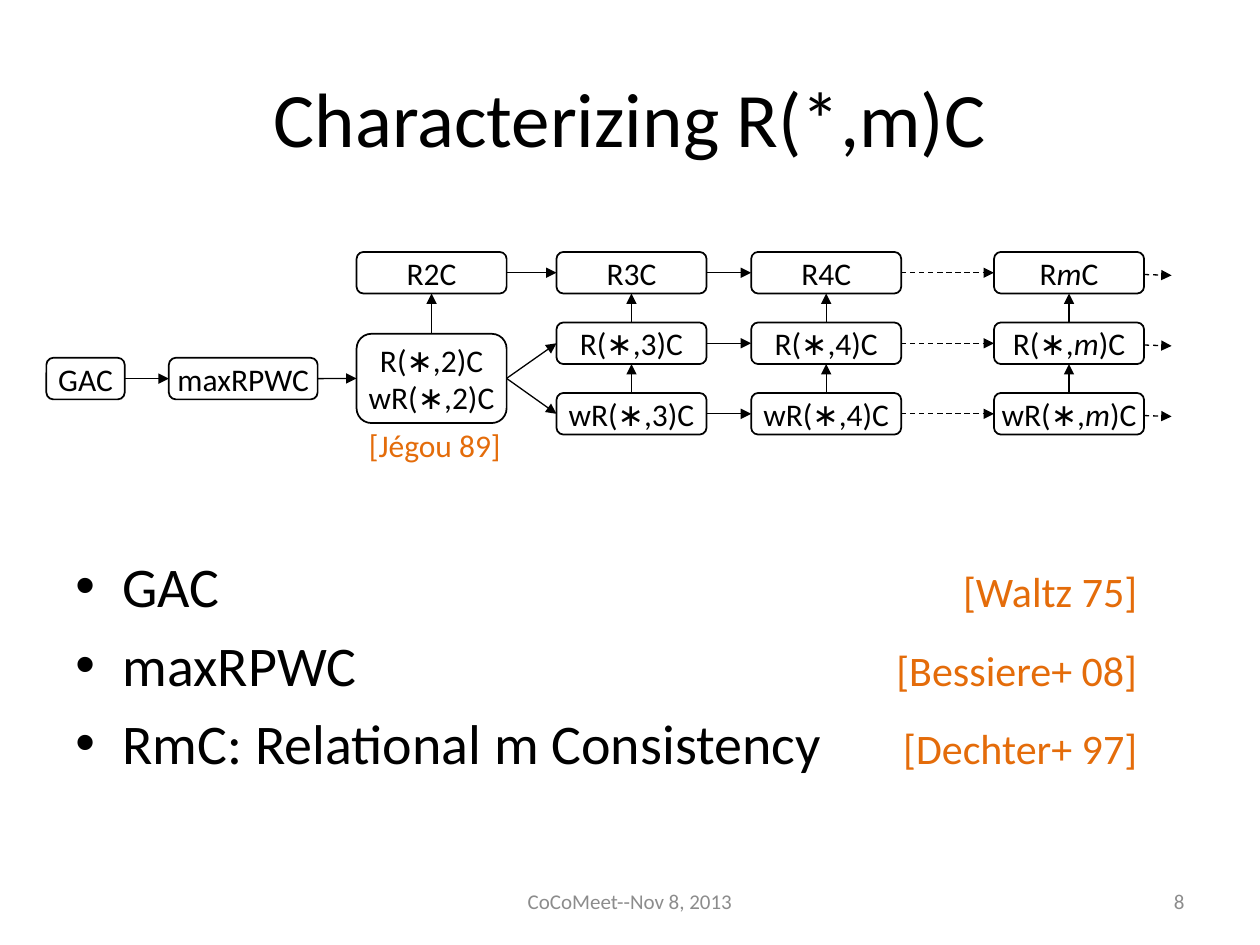
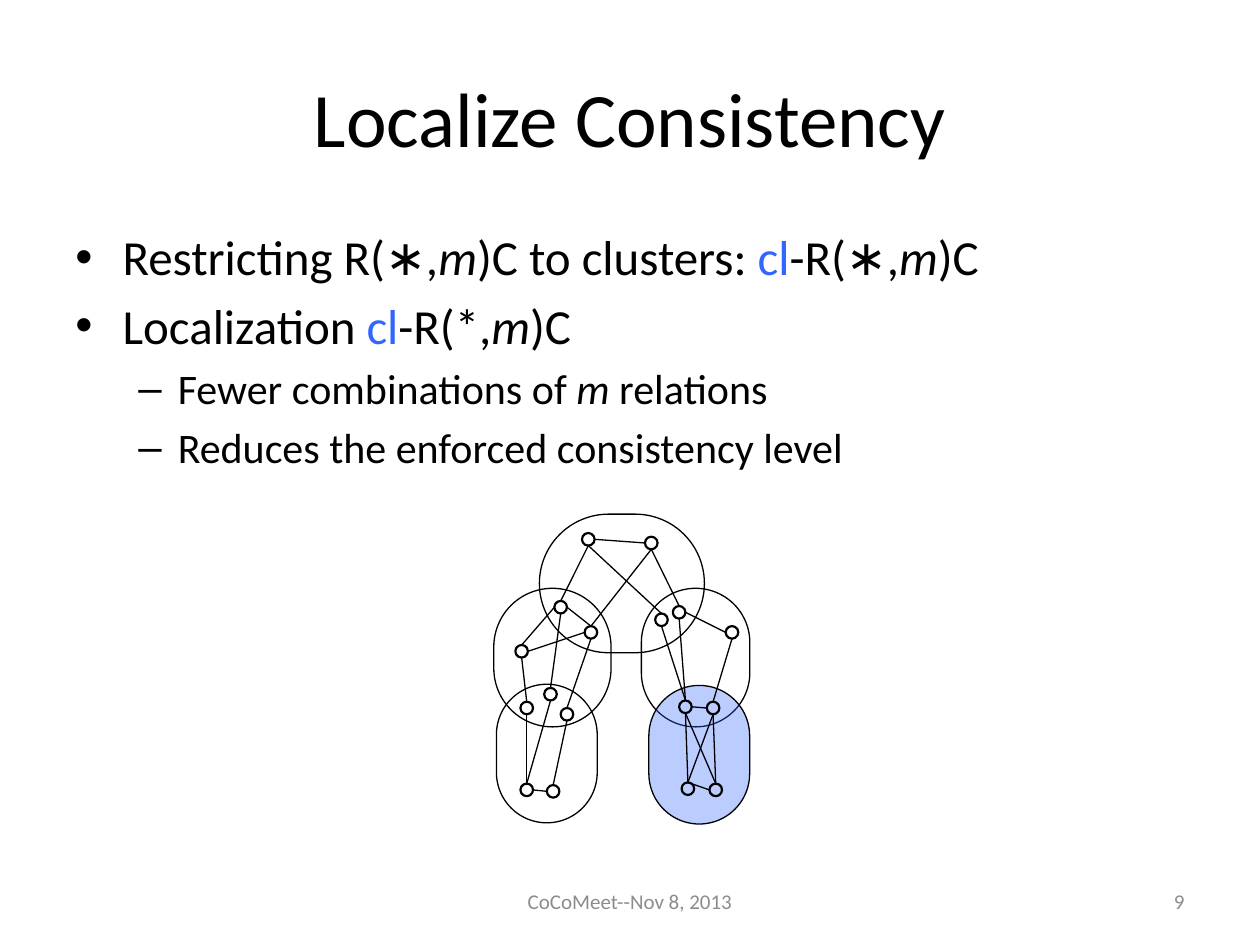
from dataclasses import dataclass
from typing import NamedTuple

from lxml import etree
from pptx import Presentation
from pptx.dml.color import RGBColor
from pptx.enum.dml import MSO_LINE
from pptx.enum.shapes import MSO_CONNECTOR, MSO_SHAPE
from pptx.enum.text import MSO_ANCHOR, PP_ALIGN
from pptx.oxml.ns import qn
from pptx.util import Pt

ROUNDED = MSO_SHAPE.ROUNDED_RECTANGLE
STRAIGHT = MSO_CONNECTOR.STRAIGHT
DASH = MSO_LINE.DASH
MIDDLE, UPPER = MSO_ANCHOR.MIDDLE, MSO_ANCHOR.TOP
LEFT_ALIGN, CENTER, RIGHT_ALIGN = PP_ALIGN.LEFT, PP_ALIGN.CENTER, PP_ALIGN.RIGHT
TOP, LEFT, BOTTOM, RIGHT = range(4)  # connection sites

FONT = "Calibri"
BLACK, WHITE, GRAY = "000000", "FFFFFF", "8C8C8C"
ORANGE, BLUE = "E46C0A", "3366FF"
TITLE_ONLY = 5
FOOTER = "CoCoMeet--Nov 8, 2013"
FOOTER_TOP, FOOTER_HEIGHT = 500.5, 28.75


class Area(NamedTuple):
    left: float
    top: float
    width: float
    height: float


class Bullet(NamedTuple):
    mark: str
    margin: float
    hanging: float


class Link(NamedTuple):
    start: str
    start_side: int
    end: str
    end_side: int
    dashed: bool = False


@dataclass(frozen=True)
class Run:
    text: str
    italic: bool = False
    color: str | None = None
    size: float | None = None


@dataclass(frozen=True)
class Line:
    runs: tuple
    size: float | None = None
    bullet: Bullet | None = None
    right_tab: float | None = None


M = Run("m", italic=True)
CL = Run("cl", color=BLUE)
DOT = Bullet("•", 27, 27)
EN_DASH = Bullet("–", 58.5, 22.5)


def rgb(color: str) -> RGBColor:
    return RGBColor.from_string(color)


def points(area: Area) -> list:
    return [Pt(length) for length in area]


def set_bullet(paragraph, bullet: Bullet) -> None:
    props = paragraph._p.get_or_add_pPr()
    props.set("marL", str(Pt(bullet.margin)))
    props.set("indent", str(-Pt(bullet.hanging)))
    etree.SubElement(props, qn("a:buFont"), typeface="Arial")
    etree.SubElement(props, qn("a:buChar"), char=bullet.mark)


def set_right_tab(paragraph, position: float) -> None:
    tabs = etree.SubElement(paragraph._p.get_or_add_pPr(), qn("a:tabLst"))
    etree.SubElement(tabs, qn("a:tab"), pos=str(Pt(position)), algn="r")


def write_text(frame, lines: list[Line], *, size: float, color: str = BLACK,
               align=LEFT_ALIGN, anchor=UPPER, margin: float | None = None) -> None:
    frame.word_wrap = True
    frame.vertical_anchor = anchor
    if margin is not None:
        frame.margin_left = frame.margin_right = Pt(margin)
        frame.margin_top = frame.margin_bottom = Pt(margin)
    for index, line in enumerate(lines):
        paragraph = frame.add_paragraph() if index else frame.paragraphs[0]
        paragraph.alignment = align
        line_size = line.size or size
        if line.bullet:
            paragraph.space_before = Pt(round(line_size * 0.2, 1))
            set_bullet(paragraph, line.bullet)
        if line.right_tab:
            set_right_tab(paragraph, line.right_tab)
        for part in line.runs:
            spec_run = part if isinstance(part, Run) else Run(part)
            run = paragraph.add_run()
            run.text = spec_run.text
            run.font.name = FONT
            run.font.size = Pt(spec_run.size or line_size)
            run.font.italic = spec_run.italic
            run.font.color.rgb = rgb(spec_run.color or color)


def add_text(slide, area: Area, lines: list[Line], **text_format) -> None:
    write_text(slide.shapes.add_textbox(*points(area)).text_frame, lines, **text_format)


def add_rounded(slide, area: Area, *, fill: str | None = None, opacity: int = 100,
                weight: float = 1, corner: float | None = None):
    shape = slide.shapes.add_shape(ROUNDED, *points(area))
    shape.shadow.inherit = False
    if corner is not None:
        shape.adjustments[0] = corner
    if fill:
        shape.fill.solid()
        shape.fill.fore_color.rgb = rgb(fill)
        if opacity < 100:
            tint = shape._element.spPr.find(".//" + qn("a:srgbClr"))
            etree.SubElement(tint, qn("a:alpha"), val=str(opacity * 1000))
    else:
        shape.fill.background()
    shape.line.color.rgb = rgb(BLACK)
    shape.line.width = Pt(weight)
    return shape


def add_line(slide, *, dashed: bool = False, arrow: bool = False,
             start: tuple = (0, 0), end: tuple = (0, 0)):
    connector = slide.shapes.add_connector(
        STRAIGHT, *(Pt(value) for value in (*start, *end)))
    connector.line.color.rgb = rgb(BLACK)
    connector.line.width = Pt(0.75)
    if dashed:
        connector.line.dash_style = DASH
    properties = connector._element.spPr
    if arrow:
        etree.SubElement(properties.find(qn("a:ln")), qn("a:tailEnd"), type="triangle")
    etree.SubElement(properties, qn("a:effectLst"))
    return connector


def add_links(slide, shapes: dict, links: list[Link], arrow: bool) -> None:
    for link in links:
        connector = add_line(slide, dashed=link.dashed, arrow=arrow)
        connector.begin_connect(shapes[link.start], link.start_side)
        connector.end_connect(shapes[link.end], link.end_side)


def new_slide(deck, title: str, number: int):
    slide = deck.slides.add_slide(deck.slide_layouts[TITLE_ONLY])
    heading = slide.shapes.title
    heading.left, heading.top, heading.width, heading.height = points(
        Area(36, 21.6, 648, 90))
    write_text(heading.text_frame, [Line((title,))], size=44, align=CENTER, anchor=MIDDLE)
    for text, left, width, align in ((FOOTER, 246, 228, CENTER),
                                     (str(number), 516, 168, RIGHT_ALIGN)):
        add_text(slide, Area(left, FOOTER_TOP, width, FOOTER_HEIGHT), [Line((text,))],
                 size=12, color=GRAY, align=align, anchor=MIDDLE)
    return slide


def build_characterizing(deck) -> None:
    slide = new_slide(deck, "Characterizing R(*,m)C", 8)

    # Consistency properties: three rows, one column for each m
    width, height, row_top, row_pitch = 85.75, 23.75, 144, 40.3
    columns = {"2": 203.75, "3": 318, "4": 429.25, "m": 568}
    rows = {"R": ("R", "C"), "R*": ("R(∗,", ")C"), "wR*": ("wR(∗,", ")C")}
    properties = {
        "GAC": (Area(26.5, 204.5, 44.75, height), [Line(("GAC",))]),
        "maxRPWC": (Area(96.5, 204.5, 85, height), [Line(("maxRPWC",))]),
        "R*2": (Area(columns["2"], 190.75, width, 51),
                [Line(("R(∗,2)C",)), Line(("wR(∗,2)C",))]),
    }
    for index, (row, (before, after)) in enumerate(rows.items()):
        for m, left in columns.items():
            if m == "2" and row != "R":
                continue
            area = Area(left, row_top + index * row_pitch, width, height)
            label = (before, M, after) if m == "m" else (before + m + after,)
            properties[row + m] = (area, [Line(label)])
    boxes = {}
    for name, (area, lines) in properties.items():
        boxes[name] = add_rounded(slide, area, fill=WHITE)
        write_text(boxes[name].text_frame, lines, size=18, align=CENTER,
                   anchor=MIDDLE, margin=0)

    # Arrows from weaker to stronger properties
    links = [
        Link("GAC", RIGHT, "maxRPWC", LEFT),
        Link("maxRPWC", RIGHT, "R*2", LEFT),
        Link("R*2", TOP, "R2", BOTTOM),
        Link("R2", RIGHT, "R3", LEFT),
        Link("R*2", RIGHT, "R*3", LEFT),
        Link("R*2", RIGHT, "wR*3", LEFT),
    ]
    for row in rows:
        links.append(Link(row + "3", RIGHT, row + "4", LEFT))
        links.append(Link(row + "4", RIGHT, row + "m", LEFT, dashed=True))
    for m in "34m":
        links.append(Link("wR*" + m, TOP, "R*" + m, BOTTOM))
        links.append(Link("R*" + m, TOP, "R" + m, BOTTOM))
    add_links(slide, boxes, links, arrow=True)
    for index in range(len(rows)):
        level = row_top + index * row_pitch + height / 2 + 1
        add_line(slide, start=(columns["m"] + width, level), end=(669.5, level + 0.5),
                 dashed=True, arrow=True)

    # References
    add_text(slide, Area(203.75, 240, 92, 29), [Line(("[Jégou 89]",))],
             size=18, color=ORANGE)
    references = [("GAC", "[Waltz 75]"), ("maxRPWC", "[Bessiere+ 08]"),
                  ("RmC: Relational m Consistency", "[Dechter+ 97]")]
    add_text(slide, Area(36, 311.75, 648, 150),
             [Line((name + "\t", Run(cited, color=ORANGE, size=24)),
                   bullet=DOT, right_tab=629) for name, cited in references],
             size=32)


def build_localize(deck) -> None:
    slide = new_slide(deck, "Localize Consistency", 9)
    add_text(slide, Area(36, 126, 630, 356.5), [
        Line(("Restricting R(∗,", M, ")C to clusters: ", CL, "-R(∗,", M, ")C"), bullet=DOT),
        Line(("Localization ", CL, "-R(*,", M, ")C"), bullet=DOT),
        Line(("Fewer combinations of ", M, " relations"), size=24, bullet=EN_DASH),
        Line(("Reduces the enforced consistency level",), size=24, bullet=EN_DASH),
    ], size=28)

    # Clusters
    for left, top, width in ((308.2, 293.8, 94.3), (282.2, 336.2, 67),
                             (366.5, 336.2, 62), (283.7, 391, 57.6)):
        add_rounded(slide, Area(left, top, width, 79.2), weight=0.75, corner=0.5)
    add_rounded(slide, Area(370.8, 391.7, 57.6, 79.2), fill=BLUE, opacity=33,
                weight=0.75, corner=0.5)

    # Vertices, from top to bottom
    diameter = 7.2
    corners = {
        "a": (332.6, 304.6), "b": (368.6, 306.7), "c": (316.8, 343.4),
        "d": (334.1, 357.8), "e": (374.4, 350.6), "f": (384.5, 346.3),
        "g": (414.7, 357.8), "h": (294.5, 368.6), "i": (297.4, 401),
        "j": (311, 393.1), "k": (320.4, 404.6), "l": (388.1, 400.3),
        "m": (403.9, 401), "n": (297.4, 447.8), "o": (312.5, 448.6),
        "p": (389.5, 447.1), "q": (405.4, 447.8),
    }
    vertices = {name: add_rounded(slide, Area(left, top, diameter, diameter),
                                  weight=1.25, corner=0.5)
                for name, (left, top) in corners.items()}

    # Edges: mostly from the bottom of one vertex to the top of the next
    downward = ["ac", "ae", "bd", "bf", "cj", "dk", "el", "fl", "gm", "hi",
                "in", "jn", "ko", "lp", "lq", "mp", "mq"]
    edges = [Link(upper, BOTTOM, lower, TOP) for upper, lower in downward]
    edges += [Link(west, RIGHT, east, LEFT)
              for west, east in ("ab", "fg", "hd", "lm", "no")]
    edges += [Link("c", LEFT, "h", TOP), Link("c", RIGHT, "d", TOP),
              Link("p", TOP, "q", LEFT)]
    add_links(slide, vertices, edges, arrow=False)


def main() -> None:
    deck = Presentation()
    deck.slide_width, deck.slide_height = Pt(720), Pt(540)
    build_characterizing(deck)
    build_localize(deck)
    deck.save("out.pptx")


if __name__ == "__main__":
    main()
